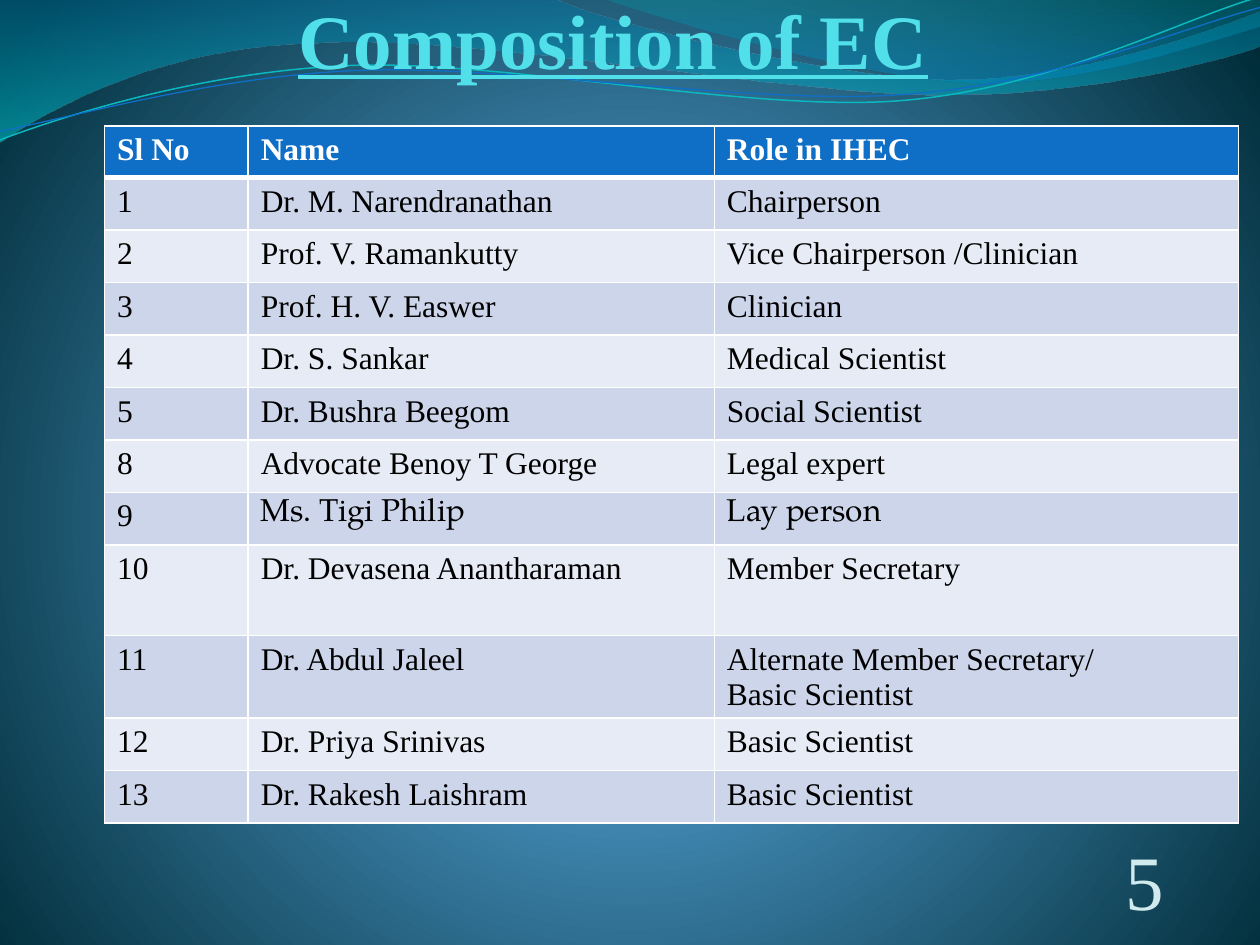
import math

import pptx
import pptx.dml.color
import pptx.enum.text
import pptx.oxml
import pptx.oxml.ns
import pptx.util
from pptx.util import Inches

RGBColor = pptx.dml.color.RGBColor
WHITE = RGBColor(0xFF, 0xFF, 0xFF)
BLACK = RGBColor(0, 0, 0)
HEADER_BLUE = RGBColor(0x0F, 0x6F, 0xC6)
BAND_DARK = RGBColor(0xCC, 0xD5, 0xEA)
BAND_LIGHT = RGBColor(0xE7, 0xEB, 0xF5)
TITLE_CYAN = RGBColor(0x51, 0xE0, 0xEA)
NUMBER_PALE = RGBColor(0xD1, 0xEA, 0xEE)
LINE_TEAL = RGBColor(0x0A, 0xB8, 0xBF)
SKY, MID_BLUE, DEEP = RGBColor(0x4A, 0xA0, 0xD6), RGBColor(0x4C, 0x98, 0xC7), RGBColor(0, 0x2C, 0x38)
WAVE_BLUE, WAVE_TEAL = RGBColor(0, 0x74, 0xA1), RGBColor(0, 0xC6, 0xCF)
CREST_TEAL, CREST_BLUE = RGBColor(0, 0xA1, 0xA9), RGBColor(0, 0x8B, 0xBF)

SERIF = "Times New Roman"
PAGELLA = "TeX Gyre Pagella"
DRAWING_NS = pptx.oxml.ns.nsdecls("a")
ROWS = [
    ("Sl No", "Name", "Role in IHEC"),
    ("1", "Dr. M. Narendranathan", "Chairperson"),
    ("2", "Prof. V. Ramankutty", "Vice Chairperson /Clinician"),
    ("3", "Prof. H. V. Easwer", "Clinician"),
    ("4", "Dr. S. Sankar", "Medical Scientist"),
    ("5", "Dr. Bushra Beegom", "Social Scientist"),
    ("8", "Advocate Benoy T George", "Legal expert"),
    ("9", "Ms. Tigi Philip", "Lay person"),
    ("10", "Dr. Devasena Anantharaman", "Member Secretary"),
    ("11", "Dr. Abdul Jaleel", "Alternate Member Secretary/\nBasic Scientist"),
    ("12", "Dr. Priya Srinivas", "Basic Scientist"),
    ("13", "Dr. Rakesh Laishram", "Basic Scientist"),
]
ROW_HEIGHT = pptx.util.Pt(30)
SPECIAL_HEIGHTS = {0: Inches(0.41), 8: Inches(0.72), 9: Inches(0.65)}
PAGELLA_CELLS = {(7, 1), (7, 2)}


def gradient(stops, direction):
    """Gradient fill from (position %, colour, opacity %) stops."""
    marks = "".join(
        f'<a:gs pos="{position * 1000}"><a:srgbClr val="{colour}">'
        f'<a:alpha val="{opacity * 1000}"/></a:srgbClr></a:gs>'
        for position, colour, opacity in stops)
    return pptx.oxml.parse_xml(
        f'<a:gradFill {DRAWING_NS} rotWithShape="1"><a:gsLst>{marks}</a:gsLst>{direction}</a:gradFill>')


def replace_solid_fill(parent, new_fill):
    parent.replace(parent.find(pptx.oxml.ns.qn("a:solidFill")), new_fill)


def set_background(page):
    page.background.fill.solid()
    properties = page.background._cSld.bg.bgPr
    direction = ('<a:path path="circle"><a:fillToRect l="10000" t="110000" '
                 'r="10000" b="100000"/></a:path>')
    replace_solid_fill(properties, gradient(
        [(0, SKY, 100), (25, MID_BLUE, 100), (100, DEEP, 100)], direction))


def add_outline(page, start, segments, close):
    """Outline of lines (one point a segment) and cubic curves (three points)."""
    points = [(Inches(x), Inches(y)) for segment in segments for x, y in segment]
    builder = page.shapes.build_freeform(Inches(start[0]), Inches(start[1]))
    builder.add_line_segments(points, close=close)
    shape = builder.convert_to_shape()
    shape.shadow.inherit = False
    # Join each run of three line steps into one curve
    steps = iter(list(shape._element.iter(pptx.oxml.ns.qn("a:lnTo"))))
    for segment in segments:
        group = [next(steps) for _ in segment]
        if len(group) == 3:
            curve = pptx.oxml.parse_xml(f"<a:cubicBezTo {DRAWING_NS}/>")
            group[0].addprevious(curve)
            for step in group:
                curve.append(step[0])
                step.getparent().remove(step)
    return shape


def add_wave(page, start, segments, stops):
    shape = add_outline(page, start, segments, True)
    shape.line.fill.background()
    shape.fill.solid()
    replace_solid_fill(shape._element.spPr, gradient(stops, '<a:lin ang="5400000" scaled="0"/>'))


def add_swoosh(page, start, segments, centre, colour, width):
    """A curve whose frame is tilted by -2.7 degrees about its centre."""
    tilt = -2.7
    cos, sin = math.cos(math.radians(-tilt)), math.sin(math.radians(-tilt))
    cx, cy = centre

    def level(point):
        x, y = point[0] - cx, point[1] - cy
        return cx + x * cos - y * sin, cy + x * sin + y * cos

    shape = add_outline(page, level(start),
                        [[level(point) for point in segment] for segment in segments], False)
    shape.rotation = tilt
    shape.fill.background()
    shape.line.color.rgb = colour
    shape.line.width = pptx.util.Pt(width)


def add_waves(page):
    add_wave(page, (0, 0), [
        [(4.4, -0.01)],
        [(4.76, 0.17), (6.64, 0.63), (7.58, 0.63)],
        [(8.53, 0.63), (9.58, 0.26), (10, 0.09)],
        [(10.01, 0.36)],
        [(9.83, 0.44), (8.7, 0.76), (7.46, 0.75)],
        [(6.22, 0.75), (3.82, 0.28), (2.57, 0.34)],
        [(1.29, 0.36), (0.46, 0.83), (-0.01, 1.13)],
    ], [(0, WAVE_BLUE, 45), (100, WAVE_TEAL, 55)])
    add_wave(page, (4.79, -0.01), [
        [(5.09, 0.11), (6.82, 0.62), (7.69, 0.65)],
        [(8.56, 0.69), (9.61, 0.32), (10, 0.21)],
        [(10, 0)],
    ], [(0, CREST_TEAL, 30), (80, CREST_BLUE, 45)])
    add_swoosh(page, (0, 1.11), [
        [(0.48, 0.93), (1.58, 0.57), (2.77, 0.52)],
        [(3.95, 0.47), (5.93, 0.89), (7.13, 0.8)],
        [(8.33, 0.71), (9.38, 0.15), (9.98, -0.02)],
    ], (4.99, 0.58), LINE_TEAL, 0.85)
    add_swoosh(page, (0, 1.04), [
        [(0.47, 0.96), (1.64, 0.61), (2.83, 0.56)],
        [(4.03, 0.51), (5.97, 0.84), (7.17, 0.75)],
        [(8.36, 0.67), (9.41, 0.21), (10, 0.06)],
    ], (5, 0.59), HEADER_BLUE, 0.75)


def style_text(frame, size, colour, bold=False, font=SERIF, align=None):
    for para in frame.paragraphs:
        para.alignment = align
        for span in para.runs:
            span.font.name = font
            span.font.size = pptx.util.Pt(size)
            span.font.bold = bold
            span.font.color.rgb = colour


def fill_label(shape, box, text, colour, bold=False, right_inset=0):
    """Large centred text resting on the bottom of its box."""
    shape.left, shape.top, shape.width, shape.height = (Inches(length) for length in box)
    frame = shape.text_frame
    frame.text = text
    frame.word_wrap = True
    frame.auto_size = pptx.enum.text.MSO_AUTO_SIZE.NONE
    frame.vertical_anchor = pptx.enum.text.MSO_ANCHOR.BOTTOM
    frame.margin_left = frame.margin_top = frame.margin_bottom = 0
    frame.margin_right = Inches(right_inset)
    style_text(frame, 44, colour, bold, align=pptx.enum.text.PP_ALIGN.CENTER)


def add_title(page, box):
    title = page.shapes.title
    fill_label(title, box, "Composition of EC", TITLE_CYAN, True, 0.02)
    title.text_frame.paragraphs[0].runs[0].font.underline = True


def add_page_number(page, box):
    fill_label(page.shapes.add_textbox(0, 0, 0, 0), box, "5", NUMBER_PALE)


def set_borders(cell, bottom):
    properties = cell._tc.get_or_add_tcPr()
    for index, (side, width) in enumerate([("L", 1), ("R", 1), ("T", 1), ("B", bottom)]):
        properties.insert(index, pptx.oxml.parse_xml(
            f'<a:ln{side} {DRAWING_NS} w="{width * 12700}"><a:solidFill>'
            f'<a:srgbClr val="{WHITE}"/></a:solidFill></a:ln{side}>'))


def add_members_table(page, box):
    table = page.shapes.add_table(len(ROWS), 3, *(Inches(length) for length in box)).table
    for column, width in zip(table.columns, (1.14, 3.7, 4.16)):
        column.width = Inches(width)
    for row, values in enumerate(ROWS):
        table.rows[row].height = SPECIAL_HEIGHTS.get(row, ROW_HEIGHT)
        header = row == 0
        for column, value in enumerate(values):
            cell = table.cell(row, column)
            cell.text_frame.text = value
            font = PAGELLA if (row, column) in PAGELLA_CELLS else SERIF
            style_text(cell.text_frame, 18, WHITE if header else BLACK, header, font)
            cell.fill.solid()
            cell.fill.fore_color.rgb = HEADER_BLUE if header else BAND_DARK if row % 2 else BAND_LIGHT
            set_borders(cell, 3 if header else 1)


def main():
    deck = pptx.Presentation()
    deck.slide_width, deck.slide_height = Inches(10), Inches(7.5)
    page = deck.slides.add_slide(deck.slide_layouts[5])
    set_background(page)
    add_waves(page)
    # The title sits in front of the waves
    page.shapes._spTree.append(page.shapes.title._element)
    add_title(page, (0.58, 0.17, 8.59, 0.5))
    add_page_number(page, (8.67, 6.95, 0.83, 0.4))
    add_members_table(page, (0.83, 1, 9, 5.53))
    deck.save("out.pptx")


if __name__ == "__main__":
    main()
